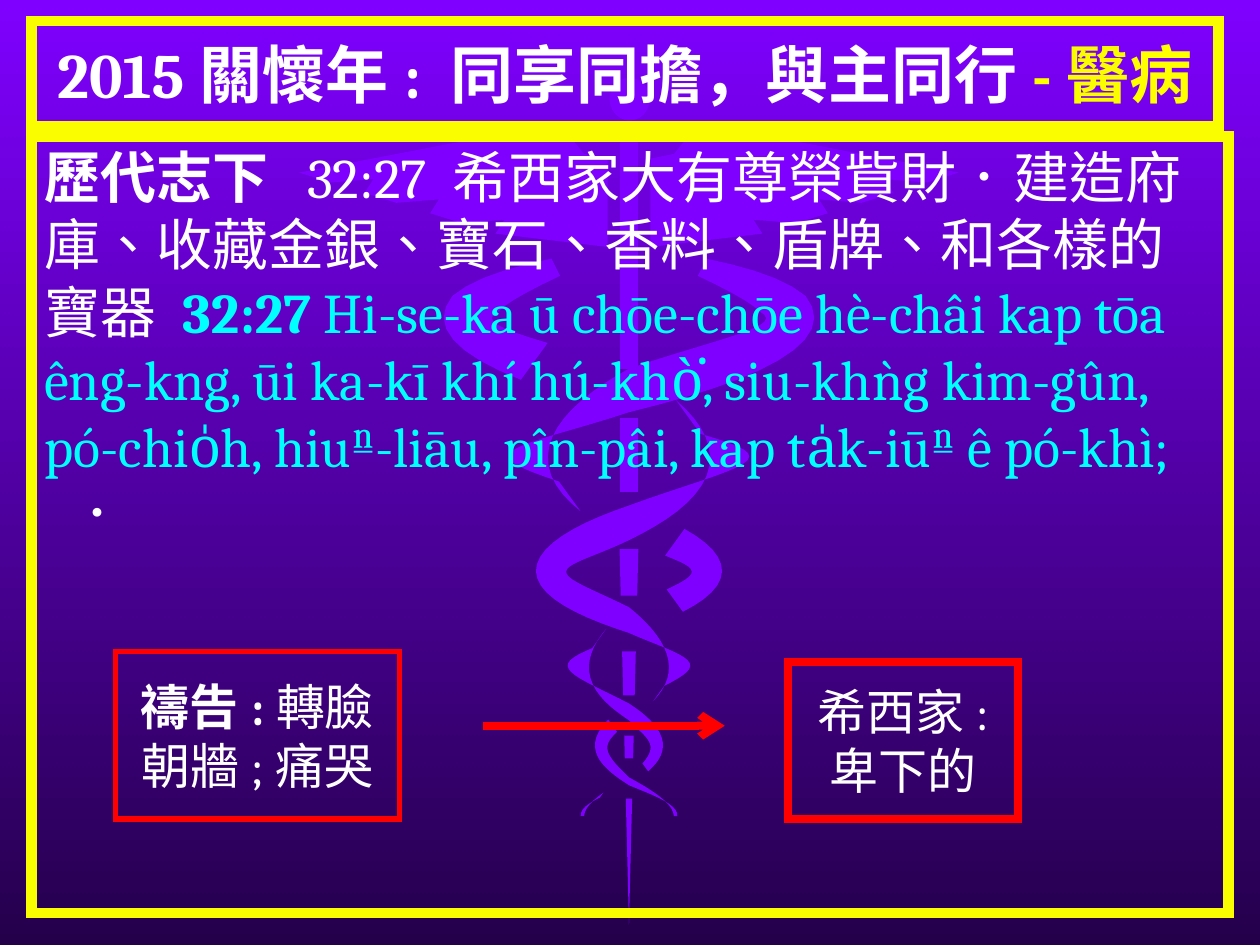
from dataclasses import dataclass
from math import cos, pi, sin
from typing import NamedTuple

from lxml import etree
from pptx import Presentation
from pptx import util as u
from pptx.dml import color
from pptx.enum import lang, shapes, text
from pptx.oxml import ns

WHITE, YELLOW, GOLD, CYAN = "FFFFFF", "FFFF00", "FAFD00", "00FFFF"
RED, VIOLET, DARK = "FF0000", "7F00FF", "24004B"
AXIS = 12.68
LEFT, RIGHT = -1, 1
STEPS_PER_COIL = 20


class Span(NamedTuple):
    start: float
    end: float


class Coil(NamedTuple):
    top: float
    bottom: float
    reach: float


class Strand(NamedTuple):
    side: int
    visible: list


CROSSINGS = [4.95, 7.87, 10.54, 12.5, 14.35, 15.75, 17.15]
REACHES = [3.25, 2.03, 1.57, 1.02, 0.56, 0.94]
COILS = [Coil(*c) for c in zip(CROSSINGS, CROSSINGS[1:], REACHES)]
SNAKES = [
    Strand(RIGHT, [Span(0.15, 1.8), Span(2.2, 2.8), Span(3.2, 4.8), Span(5.2, 5.5)]),
    Strand(LEFT, [Span(0.15, 0.8), Span(1.2, 3.8), Span(4.2, 5.5)]),
]
STAFF = [Span(2.59, 7.44), Span(8.43, 9.91), Span(11.07, 12.01),
         Span(13.13, 14.02), Span(14.83, 15.29), Span(16.1, 18.64)]
SHOULDER = [(0.43, 4.98), (0.43, 3.2), (0.91, 3.1), (1.32, 2.59), (2.16, 2.62)]
FEATHERS = 4


@dataclass
class Run:
    text: str
    color: str = WHITE
    bold: bool = False


@dataclass
class Frame:
    left: float
    top: float
    width: float
    height: float
    line: str
    weight: float
    size: int
    paragraphs: list
    align: text.PP_ALIGN = text.PP_ALIGN.CENTER
    anchor: text.MSO_ANCHOR = text.MSO_ANCHOR.MIDDLE
    before: float = 0
    language: lang.MSO_LANGUAGE_ID = lang.MSO_LANGUAGE_ID.NONE


TITLE = Frame(0.64, 0.42, 23.92, 2.12, GOLD, 6, 36, [[
    Run("2015關懷年: 同享同擔，與主同行", WHITE, True), Run("-", YELLOW, True),
    Run("醫", GOLD, True), Run("病", YELLOW, True)]])
VERSE = Frame(0.64, 2.75, 24.13, 15.66, GOLD, 6, 32, [[
    Run("歷代志下 ", WHITE, True),
    Run(" 32:27 希西家大有尊榮貲財．建造府庫、收藏金銀、寶石、香料、盾牌、和各樣的寶器"),
    Run(" 32:27 ", CYAN, True),
    Run("Hi-se-ka ū chōe-chōe hè-châi kap tōa êng-kng, ūi ka-kī khí hú-khò͘, siu-khǹg kim-gûn, "
        "pó-chio̍h, hiuⁿ-liāu, pîn-pâi, kap ta̍k-iūⁿ ê pó-khì;\n ", CYAN),
    Run("．")]], text.PP_ALIGN.LEFT, text.MSO_ANCHOR.TOP, 6.4, lang.MSO_LANGUAGE_ID.TRADITIONAL_CHINESE)
PRAYER = Frame(2.33, 13.13, 5.72, 3.38, RED, 3, 28, [[
    Run("禱告:", WHITE, True), Run("轉臉朝牆;痛哭")]])
HEZEKIAH = Frame(15.88, 13.34, 4.65, 3.18, RED, 4.5, 28, [[Run("希西家:")], [Run("卑下的")]])


def rgb(value: str) -> color.RGBColor:
    return color.RGBColor.from_string(value)


def paint(sp) -> None:
    sp.shadow.inherit = False
    sp.fill.solid()
    sp.fill.fore_color.rgb = rgb(VIOLET)
    sp.line.fill.background()


def draw_outline(s, points: list, side: int = RIGHT) -> None:
    corners = [(round(1000 * (AXIS + side * x)), round(1000 * y)) for x, y in points]
    builder = s.shapes.build_freeform(*corners[0], scale=u.Cm(0.001))
    builder.add_line_segments(corners[1:], close=True)
    paint(builder.convert_to_shape())


def staff_outline(span: Span) -> list:
    upper, lower = (min(0.19, 0.025 * (STAFF[-1].end - y)) for y in span)
    return [(-upper, span.start), (upper, span.start), (lower, span.end), (-lower, span.end)]


def snake_edge(turn: float, edge: int) -> tuple:
    coil = COILS[int(turn)]
    middle = coil.top + (turn % 1) * (coil.bottom - coil.top)
    thickness = edge * (0.53 - 0.09 * turn) * min(1, turn / 0.4)
    return (coil.reach + thickness) * sin(pi * turn), middle - thickness * cos(pi * turn)


def snake_outline(span: Span) -> list:
    steps = round((span.end - span.start) * STEPS_PER_COIL)
    turns = [span.start + (span.end - span.start) * i / steps for i in range(steps + 1)]
    return [snake_edge(t, 1) for t in turns] + [snake_edge(t, -1) for t in reversed(turns)]


def wing_outline() -> list:
    points = list(SHOULDER)
    for i in range(FEATHERS):
        x, y = 6.65 - 1.32 * i, 3.48 + 0.41 * i
        tip, belly, notch = (x, y), (x - 0.64, y + 0.2), (x - 1.5, y + 0.13)
        points += [tip, belly, notch] if i < FEATHERS - 1 else [tip]
    return points


def draw_emblem(s) -> None:
    for span in STAFF:
        draw_outline(s, staff_outline(span))
    for strand in SNAKES:
        for span in strand.visible:
            draw_outline(s, snake_outline(span), strand.side)
    for side in (LEFT, RIGHT):
        draw_outline(s, wing_outline(), side)
    paint(s.shapes.add_shape(shapes.MSO_SHAPE.OVAL, u.Cm(12.29), u.Cm(1.57), u.Cm(0.81), u.Cm(0.86)))


def fill_frame(sp, frame: Frame) -> None:
    for side in ("left", "top", "width", "height"):
        setattr(sp, side, u.Cm(getattr(frame, side)))
    sp.line.color.rgb = rgb(frame.line)
    sp.line.width = u.Pt(frame.weight)
    etree.SubElement(sp.line._get_or_add_ln(), ns.qn("a:miter"), lim="800000")
    tf = sp.text_frame
    formats = {"word_wrap": True, "auto_size": text.MSO_AUTO_SIZE.NONE, "vertical_anchor": frame.anchor}
    for name, value in formats.items():
        setattr(tf, name, value)
    for i, runs in enumerate(frame.paragraphs):
        p = tf.add_paragraph() if i else tf.paragraphs[0]
        p.alignment = frame.align
        p.space_before = u.Pt(frame.before)
        for run in runs:
            add_run(p, run, frame)


def add_run(p, run: Run, frame: Frame) -> None:
    formats = {"name": "Cambria", "size": u.Pt(frame.size), "bold": run.bold, "language_id": frame.language}
    for i, line in enumerate(run.text.split("\n")):
        if i:
            p.add_line_break()
        r = p.add_run()
        r.text = line
        for name, value in formats.items():
            setattr(r.font, name, value)
        r.font.color.rgb = rgb(run.color)


def draw_arrow(s, left: float, right: float, y: float) -> None:
    arrow = s.shapes.add_connector(shapes.MSO_CONNECTOR.STRAIGHT, u.Cm(left), u.Cm(y), u.Cm(right), u.Cm(y))
    arrow.line.color.rgb = rgb(RED)
    arrow.line.width = u.Pt(4.5)
    etree.SubElement(arrow.line._get_or_add_ln(), ns.qn("a:tailEnd"), type="arrow")
    etree.SubElement(arrow._element.spPr, ns.qn("a:effectLst"))


def main() -> None:
    prs = Presentation()
    prs.slide_width, prs.slide_height = u.Cm(25.4), u.Cm(19.05)
    s = prs.slides.add_slide(prs.slide_layouts[5])
    background = s.background.fill
    background.gradient()
    background.gradient_angle = 270
    for stop, value in zip(background.gradient_stops, (VIOLET, DARK)):
        stop.color.rgb = rgb(value)
    draw_emblem(s)
    title = s.shapes.title
    s.shapes._spTree.append(title._element)
    fill_frame(title, TITLE)
    for frame in (VERSE, PRAYER, HEZEKIAH):
        fill_frame(s.shapes.add_textbox(0, 0, 0, 0), frame)
    draw_arrow(s, 9.74, 14.61, 14.63)
    prs.save("out.pptx")


if __name__ == "__main__":
    main()
